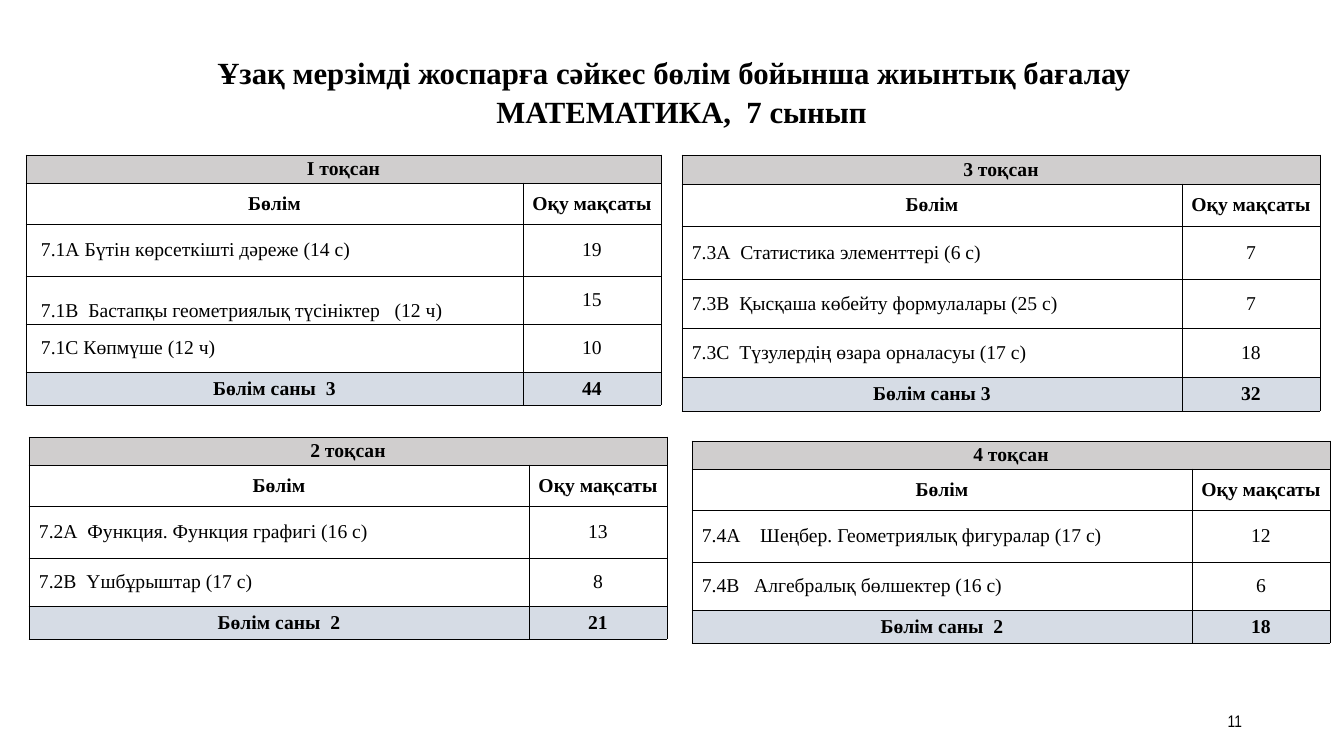
"""Build the slide with summative assessment tables for the four school quarters."""
import lxml.etree
import pptx
import pptx.dml.color
import pptx.enum.text
import pptx.oxml.ns
import pptx.util

EMU_PER_PX = 914400 / 100.8
COLORS = {"text": "000000", "quarter": "D0CECE", "body": "FFFFFF", "total": "D6DCE5"}
SERIF = "Times New Roman"
ALIGN = pptx.enum.text.PP_ALIGN
MIDDLE = pptx.enum.text.MSO_ANCHOR.MIDDLE
GOAL_WIDTH = 138

QUARTERS = [
    {"left": 26, "top": 155, "section_width": 497, "indent": 15,
     "name": "І тоқсан", "total": ("Бөлім саны  3", "44"),
     "sections": [("7.1А Бүтін көрсеткішті дәреже (14 с)", "19"),
                  ("7.1В\u00a0\u00a0Бастапқы геометриялық түсініктер   (12 ч)", "15"),
                  ("7.1С Көпмүше (12 ч)", "10")],
     "lowered": "7.1В"},
    {"left": 29, "top": 437, "name": "2 тоқсан", "total": ("Бөлім саны  2", "21"),
     "sections": [("7.2А  Функция. Функция графигі (16 с)", "13"),
                  ("7.2В  Үшбұрыштар (17 с)", "8")]},
    {"left": 682, "top": 155, "stretch": 1.02,
     "name": "3 тоқсан", "total": ("Бөлім саны 3", "32"),
     "sections": [("7.3А  Статистика элементтері (6 с)", "7"),
                  ("7.3В  Қысқаша көбейту формулалары (25 с)", "7"),
                  ("7.3С  Түзулердің өзара орналасуы (17 с)", "18")]},
    {"left": 692, "top": 441, "name": "4 тоқсан", "total": ("Бөлім саны  2", "18"),
     "sections": [("7.4А    Шеңбер. Геометриялық фигуралар (17 с)", "12"),
                  ("7.4B   Алгебралық бөлшектер (16 с)", "6")]},
]


def px(length):
    return pptx.util.Emu(round(length * EMU_PER_PX))


def rgb(name):
    return pptx.dml.color.RGBColor.from_string(COLORS[name])


def write(frame, text, *, size=14, font=SERIF, bold=False, align=ALIGN.CENTER, spacing=1.0):
    frame.word_wrap = True
    paragraph = frame.paragraphs[0]
    paragraph.alignment = align
    paragraph.line_spacing = spacing
    run = paragraph.add_run()
    run.text = text
    run.font.size = pptx.util.Pt(size)
    run.font.name = font
    run.font.bold = bold
    run.font.color.rgb = rgb("text")


def outline(cell):
    properties = cell._tc.get_or_add_tcPr()
    for position, side in enumerate(("lnL", "lnR", "lnT", "lnB")):
        border = lxml.etree.Element(pptx.oxml.ns.qn(f"a:{side}"), w=str(pptx.util.Pt(0.5)))
        fill = lxml.etree.SubElement(border, pptx.oxml.ns.qn("a:solidFill"))
        lxml.etree.SubElement(fill, pptx.oxml.ns.qn("a:srgbClr"), val=COLORS["text"])
        properties.insert(position, border)


def fill_cell(cell, text, *, color="body", indent=0, drop=0, **text_format):
    cell.margin_left, cell.margin_top = px(indent), px(drop)
    cell.margin_right = cell.margin_bottom = 0
    cell.vertical_anchor = MIDDLE
    cell.fill.solid()
    cell.fill.fore_color.rgb = rgb(color)
    outline(cell)
    write(cell.text_frame, text, **text_format)


def add_quarter(slide, *, left, top, name, sections, total, section_width=500,
                indent=10, stretch=1, lowered=None):
    heights = [28, 41, 52] + [48] * (len(sections) - 1) + [33]
    heights = [round(height * stretch) for height in heights]
    frame = slide.shapes.add_table(len(heights), 2, px(left), px(top),
                                   px(section_width + GOAL_WIDTH), px(sum(heights)))
    quarter = frame.table
    quarter.first_row = quarter.horz_banding = False
    for column, width in zip(quarter.columns, (section_width, GOAL_WIDTH)):
        column.width = px(width)
    for row, height in zip(quarter.rows, heights):
        row.height = px(height)

    quarter.cell(0, 0).merge(quarter.cell(0, 1))
    fill_cell(quarter.cell(0, 0), name, color="quarter", bold=True)
    outline(quarter.cell(0, 1))
    for column, heading in enumerate(("Бөлім", "Оқу мақсаты")):
        fill_cell(quarter.cell(1, column), heading, bold=True)
    for row, (section, goals) in enumerate(sections, start=2):
        drop = 22 if lowered and section.startswith(lowered) else 0
        fill_cell(quarter.cell(row, 0), section, indent=indent, drop=drop, align=ALIGN.LEFT)
        fill_cell(quarter.cell(row, 1), goals)
    for column, value in enumerate(total):
        fill_cell(quarter.cell(len(heights) - 1, column), value, color="total", bold=True)


def add_title(slide):
    title = slide.shapes.title
    title.left, title.top, title.width, title.height = px(143), px(47), px(1077), px(85)
    title.text_frame.vertical_anchor = pptx.enum.text.MSO_ANCHOR.TOP
    write(title.text_frame,
          "Ұзақ мерзімді жоспарға сәйкес бөлім бойынша жиынтық бағалау   МАТЕМАТИКА,  7 сынып",
          size=22, bold=True, spacing=1.05)


def add_page_number(slide):
    page = slide.shapes.add_textbox(px(950), px(701), px(302), px(40)).text_frame
    page.vertical_anchor = MIDDLE
    write(page, "11", size=12, font="Arial Narrow", align=ALIGN.RIGHT)


def main():
    deck = pptx.Presentation()
    deck.slide_width, deck.slide_height = px(1344), px(756)
    slide = deck.slides.add_slide(deck.slide_layouts[5])
    add_title(slide)
    for quarter in QUARTERS:
        add_quarter(slide, **quarter)
    add_page_number(slide)
    deck.save("out.pptx")


if __name__ == "__main__":
    main()
